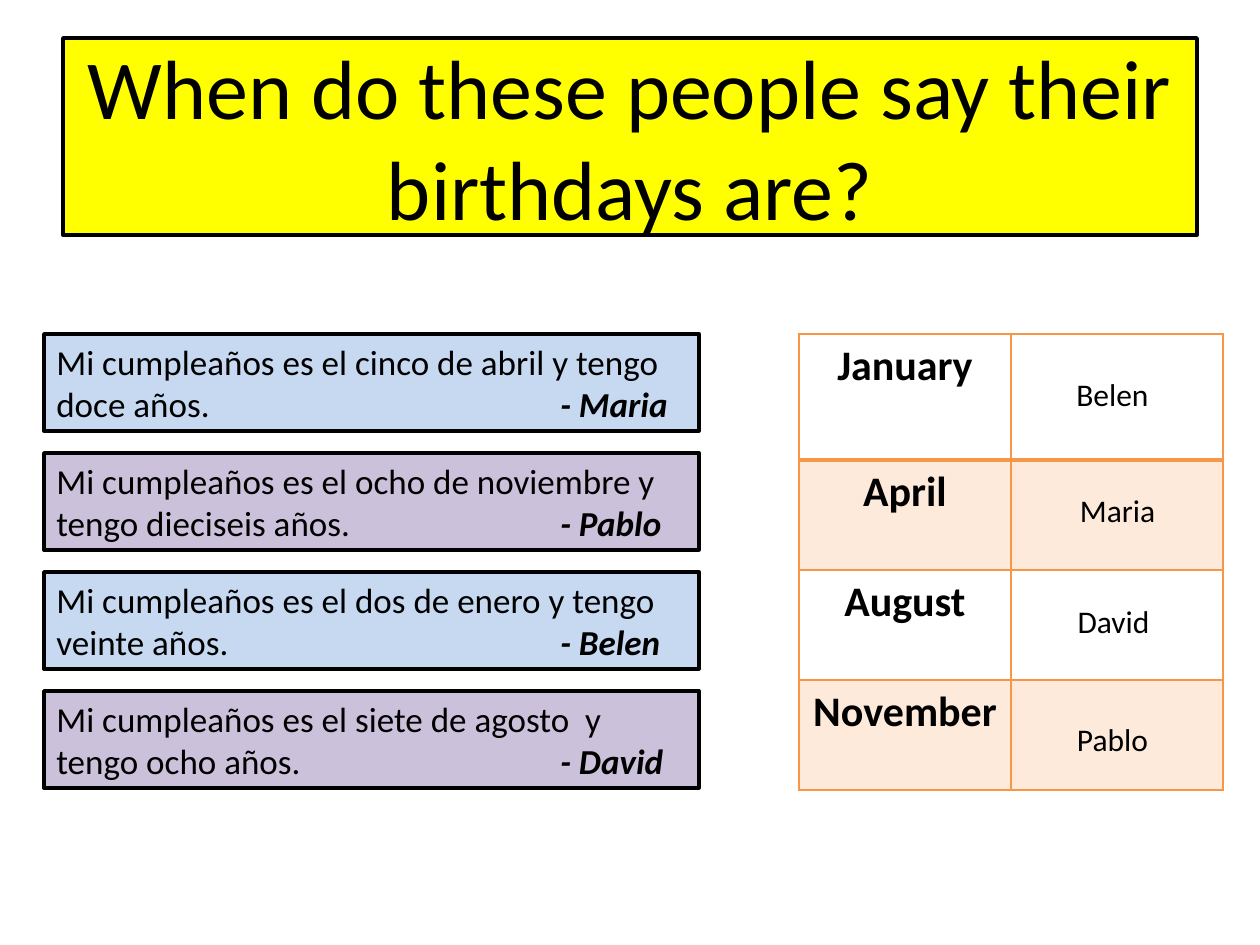
from lxml.etree import SubElement
from pptx import Presentation
from pptx.dml.color import RGBColor
from pptx.enum.shapes import MSO_SHAPE
from pptx.enum.text import MSO_ANCHOR, PP_ALIGN
from pptx.oxml.ns import qn
from pptx.util import Pt

PX = 914400 / 126
FONT = "Calibri"
COLORS = {
    "black": "000000",
    "yellow": "FFFF00",
    "blue": "C6D9F1",
    "purple": "CCC1DA",
    "orange": "F79646",
}
STATEMENTS = [
    ("Mi cumpleaños es el cinco de abril y tengo doce años.", "Maria"),
    ("Mi cumpleaños es el ocho de noviembre y tengo dieciseis años.", "Pablo"),
    ("Mi cumpleaños es el dos de enero y tengo veinte años.", "Belen"),
    ("Mi cumpleaños es el siete de agosto  y tengo ocho años.", "David"),
]
# Month, row height, answer and the answer's offset inside the table
MONTHS = [
    ("January", 126, "Belen", 229, 35),
    ("April", 110, "Maria", 234, 151),
    ("August", 110, "David", 230, 262),
    ("November", 110, "Pablo", 229, 380),
]


def px(value):
    return round(value * PX)


def color(name):
    return RGBColor.from_string(COLORS[name])


def add_span(para, text, size, bold=False, italic=False):
    span = para.add_run()
    span.text = text
    span.font.name = FONT
    span.font.size = Pt(size)
    span.font.bold = bold
    span.font.italic = italic
    span.font.color.rgb = color("black")


def style_box(shape, fill):
    shape.fill.solid()
    shape.fill.fore_color.rgb = color(fill)
    shape.line.color.rgb = color("black")
    shape.line.width = Pt(2)


def set_borders(cell, widths):
    properties = cell._tc.get_or_add_tcPr()
    for side, width in widths.items():
        line = SubElement(properties, qn(f"a:ln{side}"), w=str(Pt(width)))
        fill = SubElement(line, qn("a:solidFill"))
        SubElement(fill, qn("a:srgbClr"), val=COLORS["orange"])


def fill_title(page, left, top, width, height):
    title = page.shapes.title
    title.left, title.top = px(left), px(top)
    title.width, title.height = px(width), px(height)
    style_box(title, "yellow")
    title.text_frame.vertical_anchor = MSO_ANCHOR.MIDDLE
    para = title.text_frame.paragraphs[0]
    para.alignment = PP_ALIGN.CENTER
    add_span(para, "When do these people say their birthdays are?", 48)


def add_statements(page, left, top, width, height, pitch):
    for index, (sentence, name) in enumerate(STATEMENTS):
        box = page.shapes.add_shape(
            MSO_SHAPE.RECTANGLE,
            px(left), px(top + index * pitch), px(width), px(height))
        box.shadow.inherit = False
        style_box(box, ("blue", "purple")[index % 2])
        box.text_frame.word_wrap = True
        box.text_frame.vertical_anchor = MSO_ANCHOR.TOP
        para = box.text_frame.paragraphs[0]
        para.alignment = PP_ALIGN.LEFT
        # One tab stop lines up all the names
        tabs = SubElement(para._p.get_or_add_pPr(), qn("a:tabLst"))
        SubElement(tabs, qn("a:tab"), pos=str(px(504)), algn="l")
        add_span(para, sentence + "\t", 20)
        add_span(para, f"- {name}", 20, bold=True, italic=True)


def add_months(page, left, top, column_width):
    heights = [month[1] for month in MONTHS]
    table = page.shapes.add_table(
        len(MONTHS), 2, px(left), px(top),
        px(2 * column_width), px(sum(heights))).table
    for column in table.columns:
        column.width = px(column_width)
    for index, (month, height, *_) in enumerate(MONTHS):
        table.rows[index].height = px(height)
        for cell in table.rows[index].cells:
            # The rule below the first row is heavier
            set_borders(cell, {"L": 1, "R": 1,
                               "T": 2 if index == 1 else 1,
                               "B": 2 if index == 0 else 1})
            if index % 2:
                cell.fill.solid()
                cell.fill.fore_color.rgb = color("orange")
                tint = cell._tc.tcPr.find(qn("a:solidFill"))[0]
                SubElement(tint, qn("a:alpha"), val="20000")
            else:
                cell.fill.background()
        para = table.cell(index, 0).text_frame.paragraphs[0]
        para.alignment = PP_ALIGN.CENTER
        add_span(para, month, 24, bold=True)


def add_answers(page, left, top, width, height):
    for _, _, name, across, down in MONTHS:
        box = page.shapes.add_textbox(
            px(left + across), px(top + down), px(width), px(height))
        box.text_frame.word_wrap = True
        para = box.text_frame.paragraphs[0]
        para.alignment = PP_ALIGN.CENTER
        add_span(para, name, 18)


def main():
    deck = Presentation()
    deck.slide_width, deck.slide_height = px(1260), px(945)
    page = deck.slides.add_slide(deck.slide_layouts[5])
    fill_title(page, 63, 38, 1134, 197)
    add_months(page, 799, 334, 212)
    add_statements(page, 44, 334, 655, 97, 119)
    add_answers(page, 799, 334, 169, 50)
    deck.save("out.pptx")


if __name__ == "__main__":
    main()
